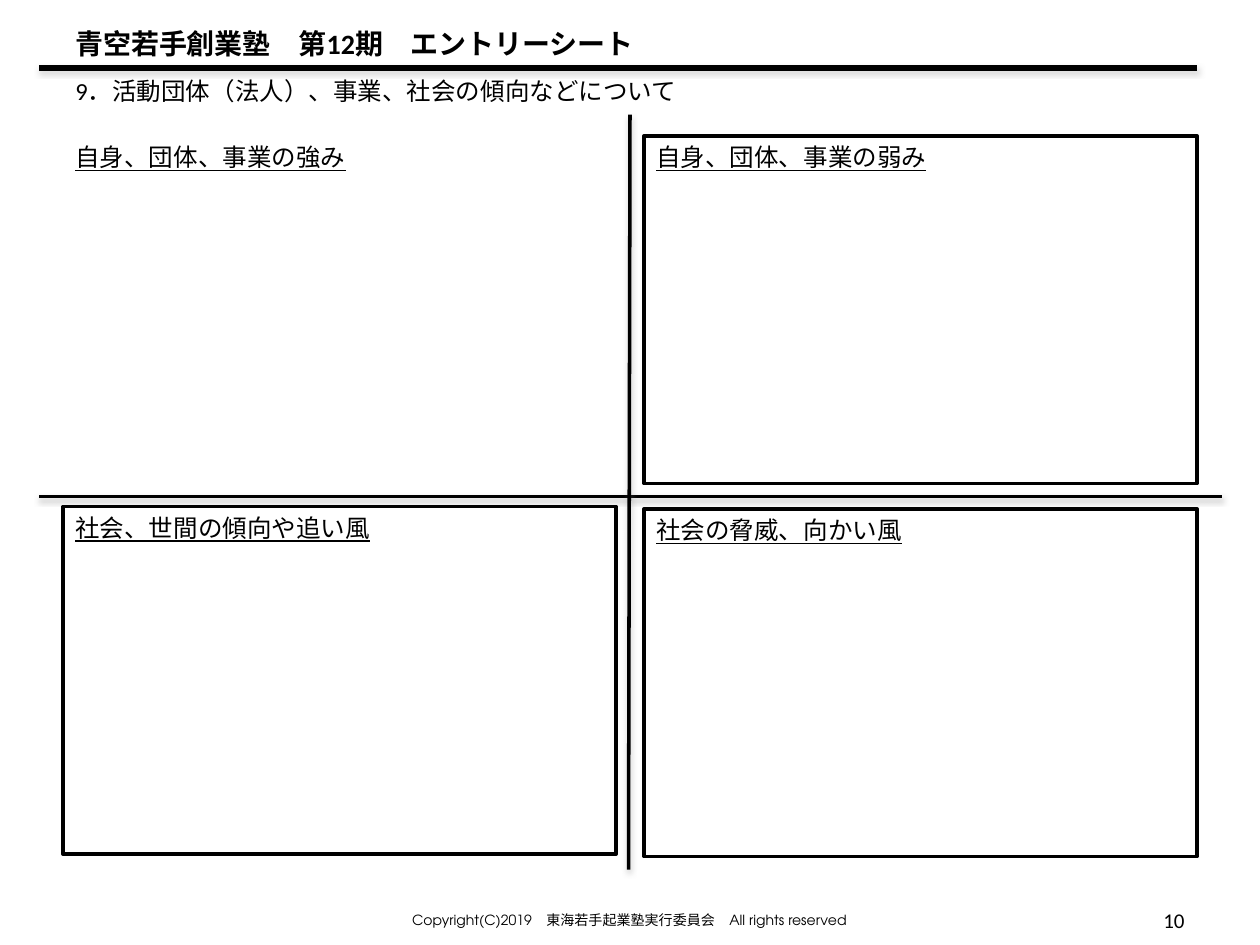
from lxml.etree import SubElement
from pptx import Presentation
from pptx.dml.color import RGBColor
from pptx.enum.shapes import MSO_CONNECTOR, MSO_SHAPE
from pptx.enum.text import MSO_ANCHOR as ANCHOR, PP_ALIGN as ALIGN
from pptx.oxml.ns import qn
from pptx.util import Cm, Pt

COLORS = {"ink": "000000", "paper": "FFFFFF", "shadow": "808080"}
BODY_FONT = "Calibri"
FOOTER_FONT = "TeX Gyre Adventor"

LEFT, RIGHT = 1.27, 12.98
BOX_W, BOX_H = 11.15, 7.01
# left, top, heading, outlined
QUADRANTS = [
    (LEFT, 2.74, "自身、団体、事業の強み", False),
    (RIGHT, 2.74, "自身、団体、事業の弱み", True),
    (LEFT, 10.21, "社会、世間の傾向や追い風", True),
    (RIGHT, 10.26, "社会の脅威、向かい風", True),
]


def color(name):
    return RGBColor.from_string(COLORS[name])


def set_text(shape, text, size, font=BODY_FONT, bold=False, underline=False,
             align=ALIGN.LEFT, anchor=ANCHOR.TOP):
    tf = shape.text_frame
    tf.word_wrap = True
    tf.vertical_anchor = anchor
    p = tf.paragraphs[0]
    p.text = text
    p.alignment = align
    f = p.runs[0].font
    f.name, f.size, f.bold, f.underline = font, Pt(size), bold, underline
    f.color.rgb = color("ink")


def add_label(s, left, top, width, height, text, size, **style):
    tb = s.shapes.add_textbox(Cm(left), Cm(top), Cm(width), Cm(height))
    set_text(tb, text, size, **style)


def add_quadrant(s, left, top, heading, outlined):
    sp = s.shapes.add_shape(MSO_SHAPE.RECTANGLE, Cm(left), Cm(top), Cm(BOX_W), Cm(BOX_H))
    sp.shadow.inherit = False
    sp.fill.solid()
    sp.fill.fore_color.rgb = color("paper")
    if outlined:
        sp.line.color.rgb = color("ink")
        sp.line.width = Pt(2)
    else:
        sp.line.fill.background()
    set_text(sp, heading, 14, underline=True)


def add_rule(s, x1, y1, x2, y2, width):
    """Draw a black line with a soft shadow below it."""
    line = s.shapes.add_connector(MSO_CONNECTOR.STRAIGHT, Cm(x1), Cm(y1), Cm(x2), Cm(y2))
    line.line.color.rgb = color("ink")
    line.line.width = Pt(width)
    effects = SubElement(line._element.spPr, qn("a:effectLst"))
    shadow = SubElement(effects, qn("a:outerShdw"), blurRad="40000", dist="20000",
                        dir="5400000", rotWithShape="0")
    tint = SubElement(shadow, qn("a:srgbClr"), val=COLORS["shadow"])
    SubElement(tint, qn("a:alpha"), val="38000")


def main():
    prs = Presentation()
    prs.slide_width, prs.slide_height = Cm(25.4), Cm(19.05)
    s = prs.slides.add_slide(prs.slide_layouts[6])

    add_label(s, LEFT, 0.41, 22.86, 1.88, "青空若手創業塾　第12期　エントリーシート", 16, bold=True)
    add_rule(s, 0.79, 1.37, 24.13, 1.37, 3)
    add_label(s, LEFT, 1.37, 22.86, 0.91, "9．活動団体（法人）、事業、社会の傾向などについて", 14,
              anchor=ANCHOR.MIDDLE)

    add_rule(s, 0.79, 10.01, 24.64, 10.01, 2)
    add_rule(s, 12.7, 2.31, 12.67, 17.53, 2)
    for quadrant in QUADRANTS:
        add_quadrant(s, *quadrant)

    add_label(s, 7.19, 18.03, 11, 1.02, "Copyright(C)2019　東海若手起業塾実行委員会　All rights reserved",
              8, font=FOOTER_FONT, align=ALIGN.CENTER, anchor=ANCHOR.MIDDLE)
    add_label(s, 18.21, 18.03, 5.92, 1.02, "10", 12, align=ALIGN.RIGHT, anchor=ANCHOR.MIDDLE)

    prs.save("out.pptx")


if __name__ == "__main__":
    main()
